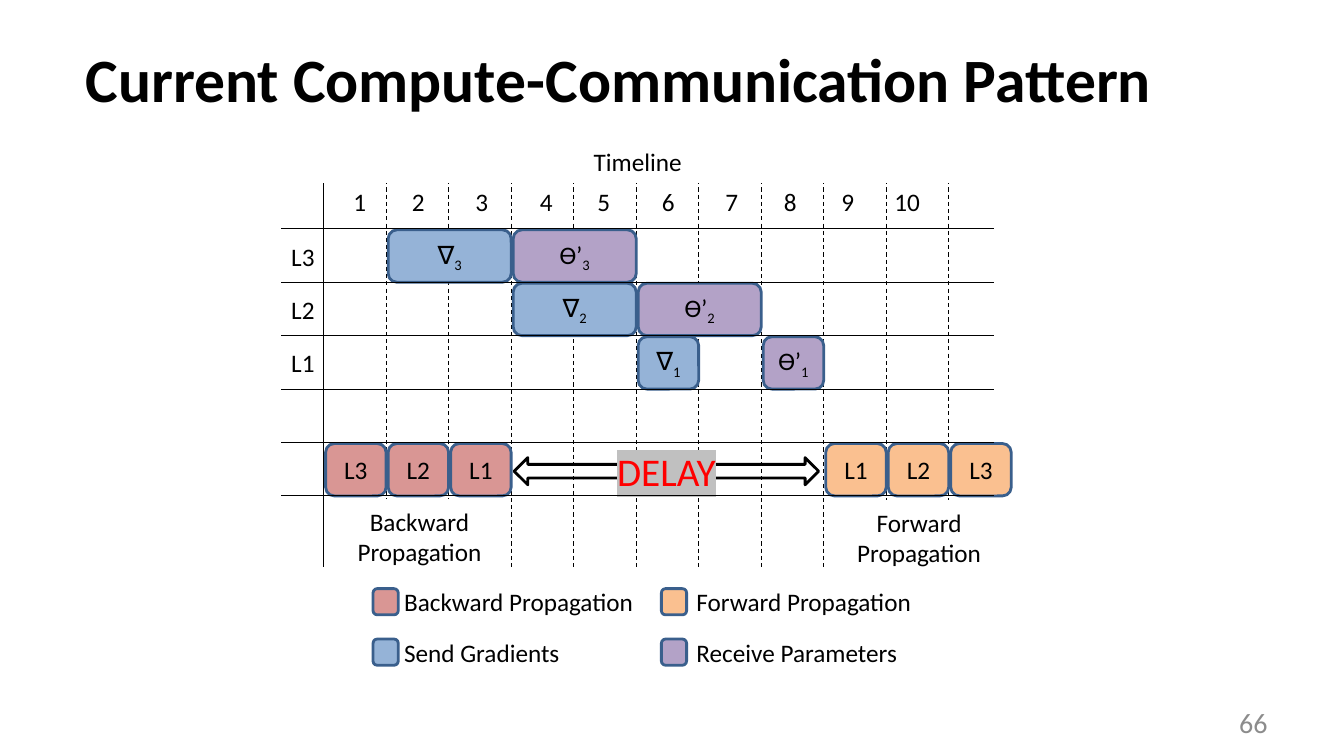
from lxml import etree
from pptx import Presentation
from pptx.dml.color import RGBColor
from pptx.enum.dml import MSO_LINE
from pptx.enum.shapes import MSO_CONNECTOR, MSO_SHAPE
from pptx.enum.text import MSO_ANCHOR, PP_ALIGN
from pptx.oxml.ns import qn
from pptx.util import Pt

TITLE = "Current Compute-Communication Pattern"
PAGE_NUMBER = "66"
BLACK, WHITE, OUTLINE = "000000", "FFFFFF", "3A5F8C"
BACKWARD, FORWARD, SEND, RECEIVE = "D99694", "FAC090", "95B3D7", "B3A2C7"

# text, subscript, row, first column, columns spanned, colour
TASKS = [
    ("∇", "3", 0, 1, 2, SEND),
    ("∇", "2", 1, 3, 2, SEND),
    ("∇", "1", 2, 5, 1, SEND),
    ("Ө’", "3", 0, 3, 2, RECEIVE),
    ("Ө’", "2", 1, 5, 2, RECEIVE),
    ("Ө’", "1", 2, 7, 1, RECEIVE),
    ("L3", "", 4, 0, 1, BACKWARD),
    ("L2", "", 4, 1, 1, BACKWARD),
    ("L1", "", 4, 2, 1, BACKWARD),
    ("L1", "", 4, 8, 1, FORWARD),
    ("L2", "", 4, 9, 1, FORWARD),
    ("L3", "", 4, 10, 1, FORWARD),
]
LAYERS = ["L3", "L2", "L1"]
# step number: centre
STEPS = {1: 357, 2: 415, 3: 478, 4: 542, 5: 599,
         6: 663, 7: 726, 8: 784, 9: 841, 10: 900}
CAPTIONS = [
    ("Timeline", 283, 140, 699, 40),
    ("Backward Propagation", 327, 496, 178, 72),
    ("Forward Propagation", 822, 497, 179, 73),
]
# text, colour, swatch left, swatch top, text left
LEGEND = [
    ("Backward Propagation", BACKWARD, 370, 584, 391),
    ("Forward Propagation", FORWARD, 656, 584, 681),
    ("Send Gradients", SEND, 370, 634, 391),
    ("Receive Parameters", RECEIVE, 656, 634, 681),
]
GRID_LEFT, GRID_TOP, COLUMN, ROW = 321, 227, 62, 53
COLUMN_LINES, ROW_LINES = 11, 6
INSET = 10
EMU_PER_PX = 9144


def px(length):
    return round(length * EMU_PER_PX)


def rgb(color):
    return RGBColor.from_string(color)


def write(shape, text, size=18, color=BLACK, align=PP_ALIGN.LEFT, subscript="", bold=False):
    frame = shape.text_frame
    frame.word_wrap = True
    paragraph = frame.paragraphs[0]
    paragraph.text = text
    paragraph.alignment = align
    if subscript:
        index = paragraph.add_run()
        index.text = subscript
        index.font._element.set("baseline", "-25000")
    for run in paragraph.runs:
        run.font.name = "Calibri"
        run.font.size = Pt(size)
        run.font.bold = bold
        run.font.color.rgb = rgb(color)
    return paragraph


def add_text(slide, text, left, top, width, **style):
    label = slide.shapes.add_textbox(px(left), px(top), px(width), px(40))
    return write(label, text, **style)


def add_block(slide, kind, box, fill, outline):
    block = slide.shapes.add_shape(kind, *map(px, box))
    block.shadow.inherit = False
    if fill:
        block.fill.solid()
        block.fill.fore_color.rgb = rgb(fill)
    else:
        block.fill.background()
    block.line.color.rgb = rgb(outline)
    block.line.width = Pt(2)
    block.text_frame.vertical_anchor = MSO_ANCHOR.MIDDLE
    return block


def add_line(slide, x1, y1, x2, y2, dashed=False):
    line = slide.shapes.add_connector(MSO_CONNECTOR.STRAIGHT, *map(px, (x1, y1, x2, y2)))
    line.line.color.rgb = rgb(BLACK)
    line.line.width = Pt(0.75)
    if dashed:
        line.line.dash_style = MSO_LINE.DASH
    etree.SubElement(line._element.spPr, qn("a:effectLst"))


def add_step_numbers(slide):
    """One line of text with a centred tab stop for each step."""
    numbers = "".join(f"\t{step}" for step in STEPS)
    paragraph = add_text(slide, numbers, GRID_LEFT, 180, 662)
    stops = etree.SubElement(paragraph._p.get_or_add_pPr(), qn("a:tabLst"))
    for centre in STEPS.values():
        position = px(centre - GRID_LEFT - INSET)
        etree.SubElement(stops, qn("a:tab"), pos=str(position), algn="ctr")


def add_delay(slide):
    arrow = add_block(slide, MSO_SHAPE.LEFT_RIGHT_ARROW, (510, 454, 302, 27), None, BLACK)
    delay = write(arrow, "DELAY", 28, "FF0000", PP_ALIGN.CENTER).runs[0]
    highlight = etree.Element(qn("a:highlight"))
    etree.SubElement(highlight, qn("a:srgbClr"), val="C0C0C0")
    delay.font._element.find(qn("a:solidFill")).addnext(highlight)


def add_timeline(slide):
    for column in range(COLUMN_LINES):
        x = GRID_LEFT + column * COLUMN
        add_line(slide, x, 143, x, 563, dashed=column > 0)
    for text, subscript, row, column, span, color in TASKS:
        box = (GRID_LEFT + column * COLUMN + 2, GRID_TOP + row * ROW + 1,
               span * COLUMN - 2, ROW - 1)
        task = add_block(slide, MSO_SHAPE.ROUNDED_RECTANGLE, box, color, OUTLINE)
        write(task, text, align=PP_ALIGN.CENTER, subscript=subscript)
    add_delay(slide)
    for row in range(ROW_LINES):
        y = GRID_TOP + row * ROW
        add_line(slide, 279, y, 986, y)
    for row, layer in enumerate(LAYERS):
        add_text(slide, layer, 279, GRID_TOP + row * ROW + 7, 53)
    add_step_numbers(slide)
    for text, *box in CAPTIONS:
        caption = add_block(slide, MSO_SHAPE.RECTANGLE, box, WHITE, WHITE)
        write(caption, text, align=PP_ALIGN.CENTER)


def add_legend(slide):
    for text, color, left, top, text_left in LEGEND:
        add_block(slide, MSO_SHAPE.ROUNDED_RECTANGLE, (left, top, 25, 26), color, OUTLINE)
        add_text(slide, text, text_left, top - 7, 260)


def main():
    deck = Presentation()
    deck.slide_width, deck.slide_height = px(1333), px(750)
    slide = deck.slides.add_slide(deck.slide_layouts[5])
    title = slide.shapes.title
    title.left, title.top, title.width, title.height = map(px, (75, 15, 1200, 125))
    title.text_frame.vertical_anchor = MSO_ANCHOR.MIDDLE
    write(title, TITLE, size=44, bold=True)
    add_timeline(slide)
    add_legend(slide)
    add_text(slide, PAGE_NUMBER, 956, 695, 311, size=20, color="8C8C8C", align=PP_ALIGN.RIGHT)
    deck.save("out.pptx")


if __name__ == "__main__":
    main()
